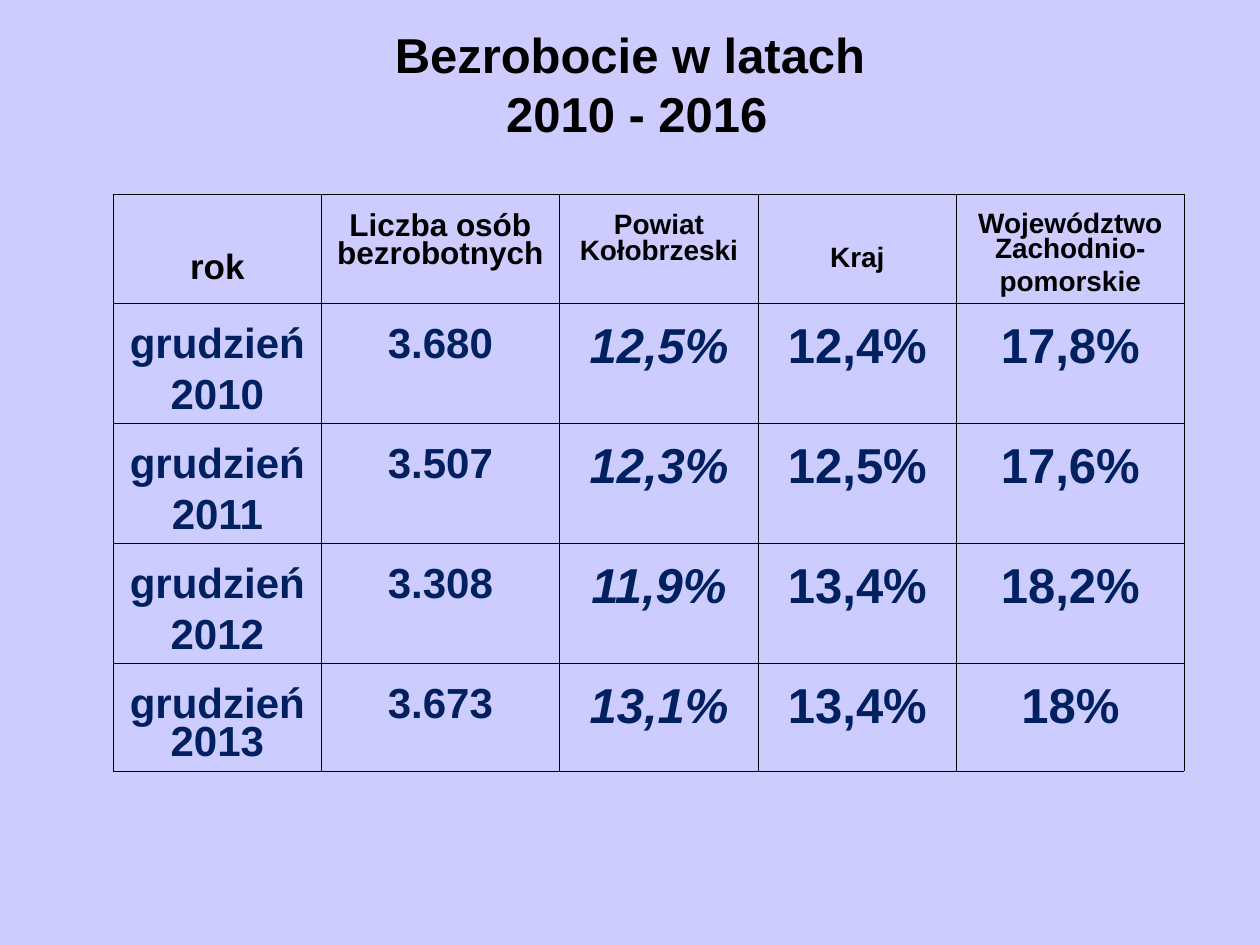
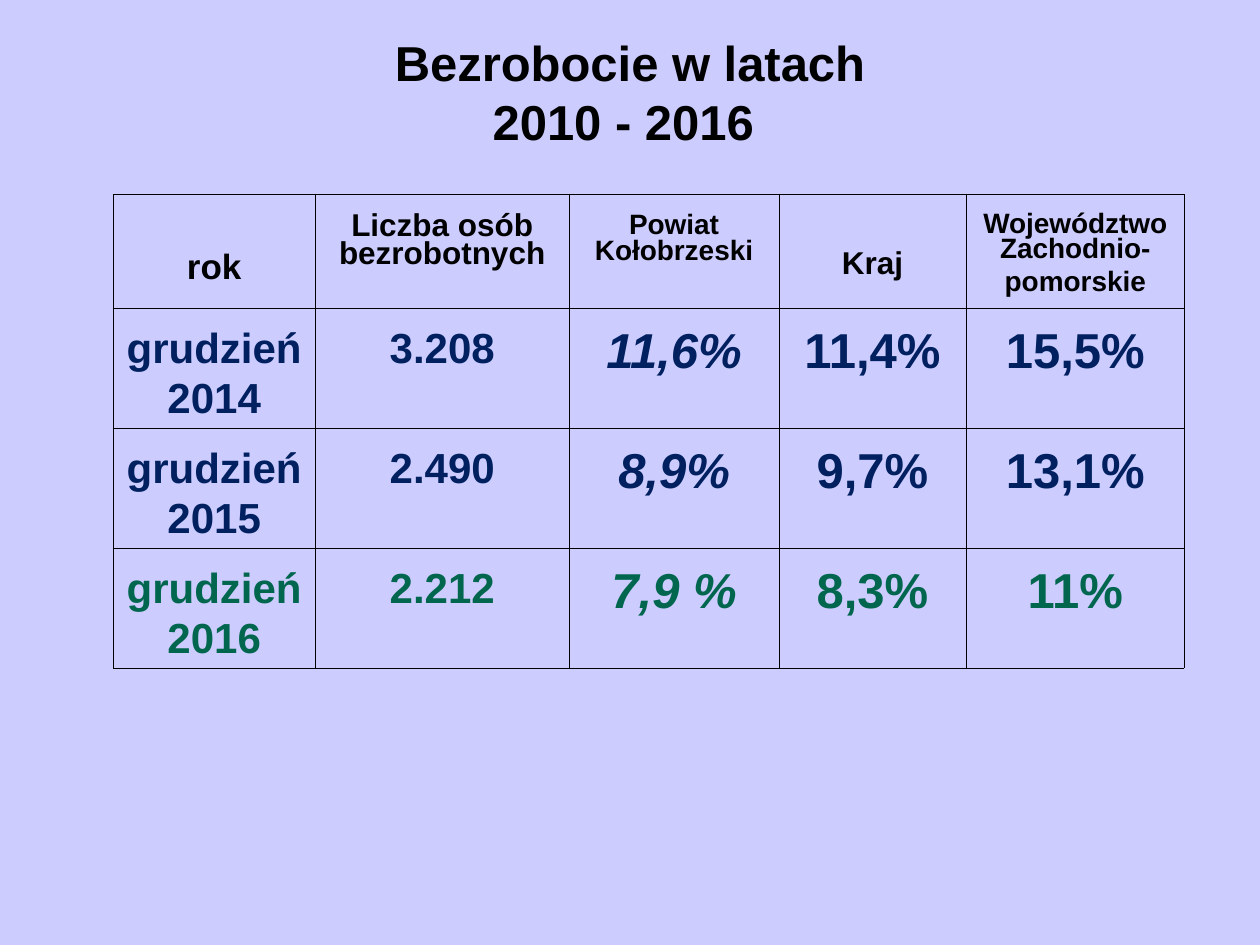
import pptx
import pptx.util
import pptx.dml.color
import pptx.enum.text
import pptx.oxml
import pptx.oxml.ns

RGBColor = pptx.dml.color.RGBColor
LAVENDER = RGBColor(0xCC, 0xCC, 0xFF)
BLACK = RGBColor(0, 0, 0)
NAVY = RGBColor(0x00, 0x20, 0x60)
GREEN = RGBColor(0x00, 0x66, 0x4D)

FONT = "Arial"
SLIDE_WIDTH = pptx.util.Inches(10)
SLIDE_HEIGHT = pptx.util.Inches(7.5)
INNER_LINE, OUTER_LINE = 0.11, 0.23  # points
LINE_SPACING = 0.81
TITLE_ONLY = 5

# Heading text, size, top inset (inches) and space before (points)
HEADINGS = [
    ("rok", 20, 0.47, 4.5),
    ("Liczba osób bezrobotnych", 18, 0.15, 4.5),
    ("Powiat Kołobrzeski", 16, 0.16, 5),
    ("Kraj", 16, 0.42, 4.5),
    ("Województwo Zachodnio-\npomorskie", 16, 0.15, 4.5),
]
KRAJ_COLUMN = 3
LARGER_KRAJ = ("Kraj", 18, 0.45, 4.5)

# Size and italics of each column below the headings
COLUMN_STYLES = [(24, False), (24, False), (28, True), (28, False), (28, False)]

YEARS_2010_2013 = [
    ("grudzień\n2010", "3.680", "12,5%", "12,4%", "17,8%"),
    ("grudzień\n2011", "3.507", "12,3%", "12,5%", "17,6%"),
    ("grudzień\n2012", "3.308", "11,9%", "13,4%", "18,2%"),
    ("grudzień 2013", "3.673", "13,1%", "13,4%", "18%"),
]
YEARS_2014_2016 = [
    ("grudzień\n2014", "3.208", "11,6%", "11,4%", "15,5%"),
    ("grudzień\n2015", "2.490", "8,9%", "9,7%", "13,1%"),
    ("grudzień\n2016", "2.212", "7,9 %", "8,3%", "11%"),
]


def across(share):
    return round(SLIDE_WIDTH * share)


def down(share):
    return round(SLIDE_HEIGHT * share)


def format_text(paragraph, size, color, italic=False):
    paragraph.alignment = pptx.enum.text.PP_ALIGN.CENTER
    font = paragraph.font
    font.name, font.size, font.bold = FONT, pptx.util.Pt(size), True
    font.italic = italic
    font.color.rgb = color


def add_title(slide, text, top):
    title = slide.shapes.title
    title.left, title.top = across(0.05), down(top)
    title.width, title.height = across(0.9), down(0.092)
    frame = title.text_frame
    frame.text = text
    frame.auto_size = pptx.enum.text.MSO_AUTO_SIZE.NONE
    frame.vertical_anchor = pptx.enum.text.MSO_ANCHOR.MIDDLE
    format_text(frame.paragraphs[0], 28, BLACK)


def set_borders(cell, outer_sides):
    """Rule all four sides, heavier on the table's outer edge."""
    properties = cell._tc.get_or_add_tcPr()
    for side in "LRTB":
        width = pptx.util.Pt(OUTER_LINE if side in outer_sides else INNER_LINE)
        properties.append(pptx.oxml.parse_xml(
            f'<a:ln{side} {pptx.oxml.ns.nsdecls("a")} w="{width}"><a:solidFill>'
            f'<a:srgbClr val="{BLACK}"/></a:solidFill></a:ln{side}>'))


def fill_cell(cell, text, size, color, inset, space_before, italic=False):
    cell.margin_left = cell.margin_right = pptx.util.Inches(0.1)
    cell.margin_top = pptx.util.Inches(inset)
    cell.margin_bottom = pptx.util.Inches(0.05)
    cell.text = text
    for paragraph in cell.text_frame.paragraphs:
        format_text(paragraph, size, color, italic)
        paragraph.line_spacing = LINE_SPACING
        paragraph.space_before = pptx.util.Pt(space_before)
    cell.fill.background()


def add_unemployment_table(slide, headings, years, columns, rows, last_color):
    """Column widths and row heights are shares of the slide."""
    table = slide.shapes.add_table(
        len(rows), len(columns), across(0.09), down(0.206),
        across(sum(columns)), down(sum(rows))).table
    table.first_row = table.horz_banding = False
    for column, share in zip(table.columns, columns):
        column.width = across(share)
    for row, share in zip(table.rows, rows):
        row.height = down(share)

    # Rules
    last_row, last_column = len(rows) - 1, len(columns) - 1
    for r in range(len(rows)):
        for c in range(len(columns)):
            edges = {"L": c == 0, "R": c == last_column, "T": r == 0}
            set_borders(table.cell(r, c), [s for s in edges if edges[s]])

    # Headings
    for c, (text, size, inset, space_before) in enumerate(headings):
        fill_cell(table.cell(0, c), text, size, BLACK, inset, space_before)

    # Yearly figures
    for r, figures in enumerate(years, start=1):
        color = last_color if r == last_row else NAVY
        for c, (text, (size, italic)) in enumerate(zip(figures, COLUMN_STYLES)):
            fill_cell(table.cell(r, c), text, size, color, 0.2, 7, italic)


def add_unemployment_slide(deck, title, title_top, **table_parts):
    slide = deck.slides.add_slide(deck.slide_layouts[TITLE_ONLY])
    add_title(slide, title, title_top)
    add_unemployment_table(slide, **table_parts)


def main():
    deck = pptx.Presentation()
    deck.slide_width, deck.slide_height = SLIDE_WIDTH, SLIDE_HEIGHT
    background = deck.slide_master.background.fill
    background.solid()
    background.fore_color.rgb = LAVENDER

    add_unemployment_slide(
        deck, "Bezrobocie w latach\v 2010 - 2016", 0.042,
        headings=HEADINGS, years=YEARS_2010_2013,
        columns=[0.165, 0.189, 0.158, 0.157, 0.181],
        rows=[0.115] + [0.127] * 3 + [0.113], last_color=NAVY)

    later_headings = list(HEADINGS)
    later_headings[KRAJ_COLUMN] = LARGER_KRAJ
    add_unemployment_slide(
        deck, "Bezrobocie w latach\v2010 - 2016 ", 0.051,
        headings=later_headings, years=YEARS_2014_2016,
        columns=[0.16, 0.202, 0.166, 0.149, 0.173],
        rows=[0.12] + [0.127] * 3, last_color=GREEN)

    deck.save("out.pptx")


if __name__ == "__main__":
    main()
